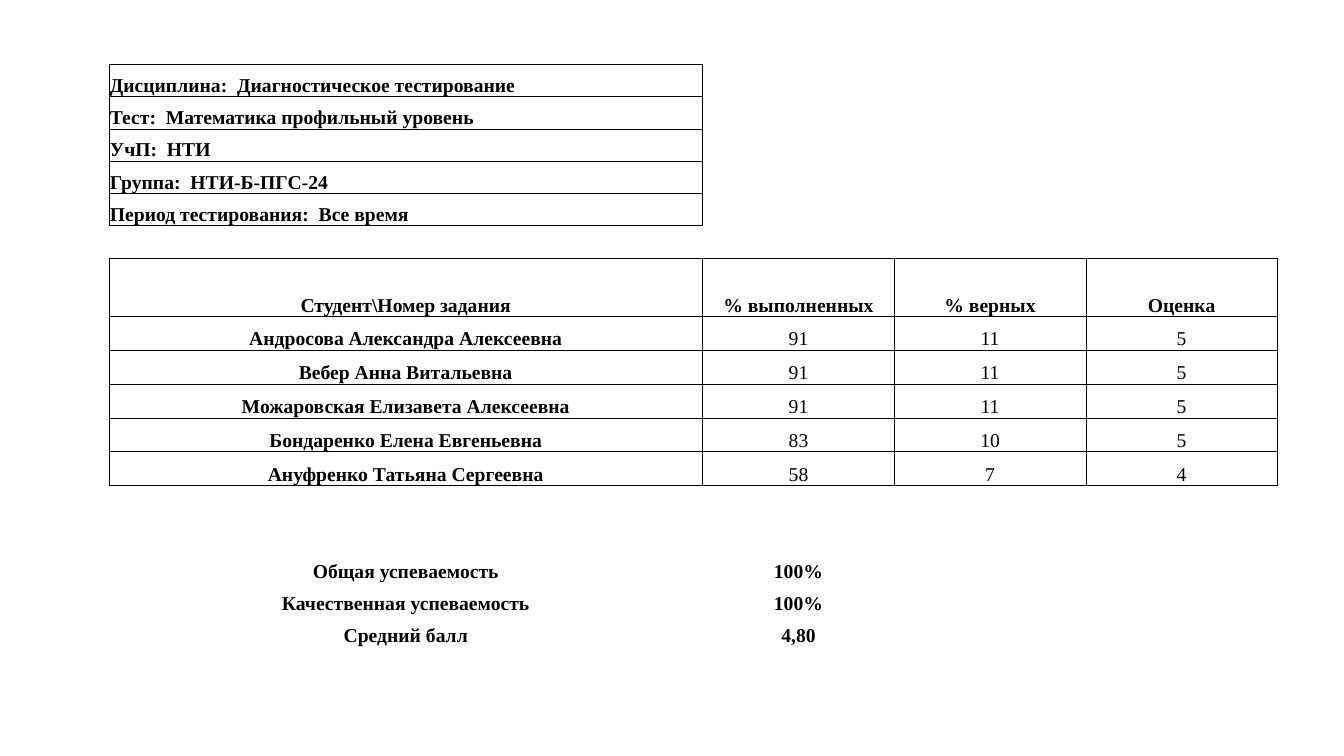
import pptx
import pptx.dml.color
import pptx.enum.text
import pptx.oxml
import pptx.oxml.ns
import pptx.util
from pptx.util import Inches

FONT = "Times New Roman"
BLACK = "000000"
CENTER = pptx.enum.text.PP_ALIGN.CENTER
LEFT = pptx.enum.text.PP_ALIGN.LEFT
NO_STYLE = "{2D5ABB26-0587-4C30-8999-92F81FD0307C}"

COL_WIDTHS = [5.89, 1.9, 1.9, 1.9]
DETAILS = [
    ["Дисциплина:  Диагностическое тестирование"],
    ["Тест:  Математика профильный уровень"],
    ["УчП:  НТИ"],
    ["Группа:  НТИ-Б-ПГС-24"],
    ["Период тестирования:  Все время"],
]
HEADER = ["Студент\\Номер задания", "% выполненных", "% верных", "Оценка"]
STUDENTS = [
    ["Андросова Александра Алексеевна", "91", "11", "5"],
    ["Вебер Анна Витальевна", "91", "11", "5"],
    ["Можаровская Елизавета Алексеевна", "91", "11", "5"],
    ["Бондаренко Елена Евгеньевна", "83", "10", "5"],
    ["Ануфренко Татьяна Сергеевна", "58", "7", "4"],
]
SUMMARY = [
    ["Общая успеваемость", "100%"],
    ["Качественная успеваемость", "100%"],
    ["Средний балл", "4,80"],
]
HEADER_ROW = len(DETAILS) + 1
FIRST_STUDENT = HEADER_ROW + 1
STUDENTS_END = FIRST_STUDENT + len(STUDENTS)
SUMMARY_ROW = STUDENTS_END + 2
ROW_COUNT = SUMMARY_ROW + len(SUMMARY)


def rgb(value):
    """Return the colour for a hex string."""
    return pptx.dml.color.RGBColor.from_string(value)


def write(tf, text, size=14, bold=True, color=BLACK, align=CENTER):
    """Write formatted text into a text frame."""
    p = tf.paragraphs[0]
    p.alignment = align
    r = p.add_run()
    r.text = text
    r.font.name = FONT
    r.font.size = pptx.util.Pt(size)
    r.font.bold = bold
    r.font.color.rgb = rgb(color)


def is_framed(row, col):
    """Tell whether a cell belongs to a ruled region."""
    if not 0 <= col < len(COL_WIDTHS):
        return False
    return (0 <= row < len(DETAILS) and col == 0) or HEADER_ROW <= row < STUDENTS_END


def rule_cell(cell, row, col):
    """Rule every edge that a cell shares with a ruled region."""
    neighbours = {"lnL": (row, col - 1), "lnR": (row, col + 1),
                  "lnT": (row - 1, col), "lnB": (row + 1, col)}
    tc_pr = cell._tc.get_or_add_tcPr()
    ns = pptx.oxml.ns.nsdecls("a")
    for tag, neighbour in neighbours.items():
        paint = "<a:noFill/>"
        if is_framed(row, col) or is_framed(*neighbour):
            paint = f'<a:solidFill><a:srgbClr val="{BLACK}"/></a:solidFill>'
        tc_pr.append(pptx.oxml.parse_xml(
            f'<a:{tag} {ns} w="{pptx.util.Pt(0.5)}">{paint}</a:{tag}>'))


def format_cell(cell, row, col):
    """Set the rules, fill, insets and anchor of a cell."""
    rule_cell(cell, row, col)
    cell.fill.background()
    cell.margin_left = cell.margin_right = cell.margin_top = Inches(0.01)
    cell.margin_bottom = 0
    cell.vertical_anchor = pptx.enum.text.MSO_ANCHOR.BOTTOM


def fill_rows(table, first, rows, values_bold=True, align=CENTER):
    """Write a block of rows with bold labels in the first column."""
    for i, texts in enumerate(rows, first):
        for j, text in enumerate(texts):
            write(table.cell(i, j).text_frame, text,
                  bold=values_bold or j == 0, align=align)


def add_report(s, left, top, width, height):
    """Add the test report table in the given box."""
    table = s.shapes.add_table(ROW_COUNT, len(COL_WIDTHS),
                               left, top, width, height).table
    table.first_row = table.horz_banding = False
    table._tbl.tblPr.find(pptx.oxml.ns.qn("a:tableStyleId")).text = NO_STYLE
    for column, share in zip(table.columns, COL_WIDTHS):
        column.width = int(width * share / sum(COL_WIDTHS))
    for i, row in enumerate(table.rows):
        row.height = Inches(0.32)
        if i == HEADER_ROW:
            row.height = Inches(0.58)
        elif FIRST_STUDENT <= i < STUDENTS_END:
            row.height = int(Inches(1.68) / len(STUDENTS))
        for j, cell in enumerate(row.cells):
            format_cell(cell, i, j)
    fill_rows(table, 0, DETAILS, align=LEFT)
    fill_rows(table, HEADER_ROW, [HEADER])
    fill_rows(table, FIRST_STUDENT, STUDENTS, values_bold=False)
    fill_rows(table, SUMMARY_ROW, SUMMARY)


def main():
    """Build the slide and save it."""
    prs = pptx.Presentation()
    prs.slide_width, prs.slide_height = Inches(13.33), Inches(7.5)
    s = prs.slides.add_slide(prs.slide_layouts[6])
    add_report(s, Inches(1.08), Inches(0.64), Inches(11.59), Inches(5.78))
    prs.save("out.pptx")


if __name__ == "__main__":
    main()
